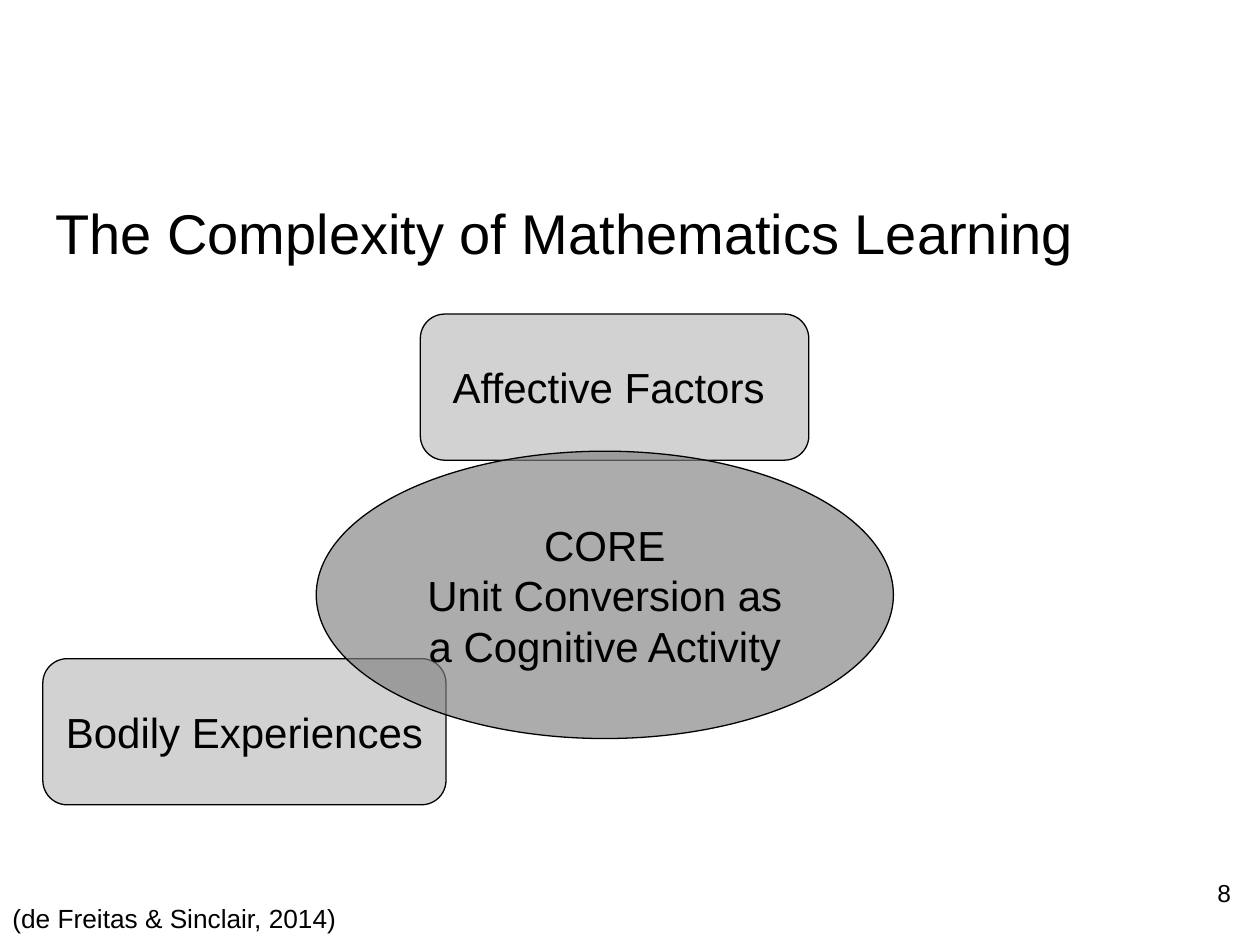
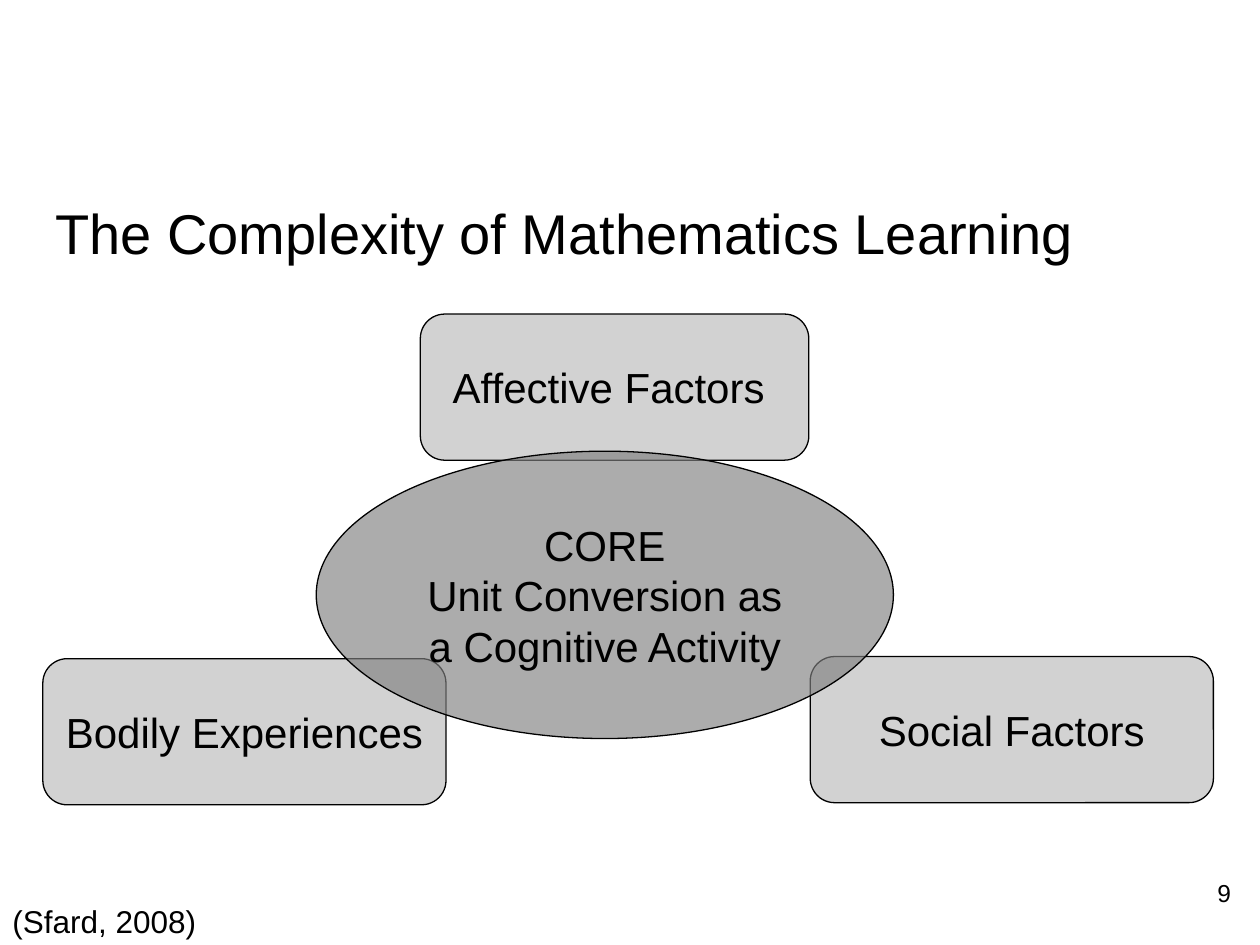
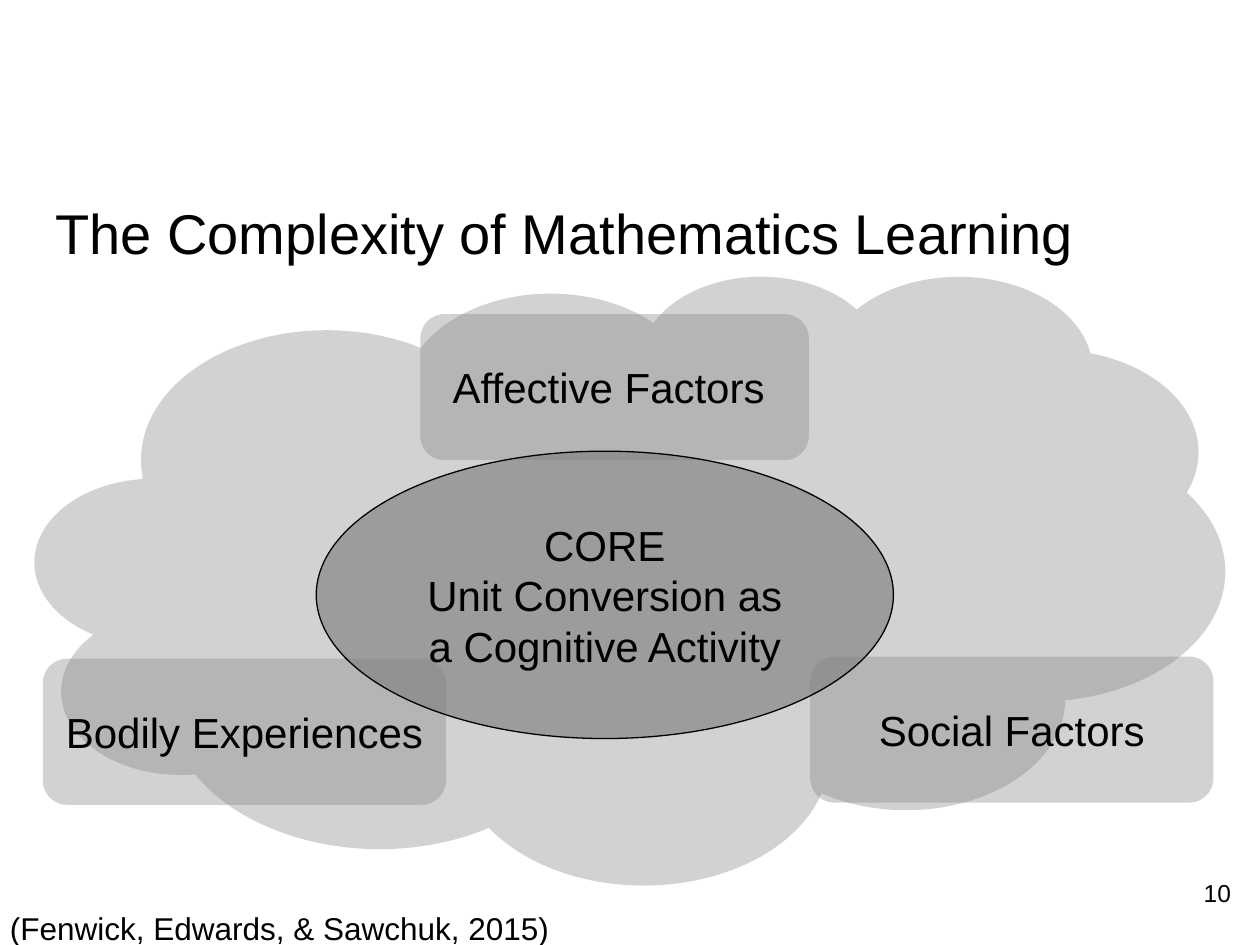
from dataclasses import dataclass

from lxml import etree
from pptx import Presentation
from pptx.dml.color import RGBColor
from pptx.enum.shapes import MSO_SHAPE
from pptx.enum.text import MSO_ANCHOR, MSO_AUTO_SIZE, PP_ALIGN
from pptx.oxml.ns import qn
from pptx.util import Pt

ROUNDED = MSO_SHAPE.ROUNDED_RECTANGLE
OVAL = MSO_SHAPE.OVAL
CLOUD = MSO_SHAPE.CLOUD
LEFT, CENTER, RIGHT = PP_ALIGN.LEFT, PP_ALIGN.CENTER, PP_ALIGN.RIGHT
TOP, MIDDLE = MSO_ANCHOR.TOP, MSO_ANCHOR.MIDDLE
NO_AUTOSIZE = MSO_AUTO_SIZE.NONE


@dataclass(frozen=True)
class Theme:
    font: str = "Arial"
    ink: RGBColor = RGBColor(0, 0, 0)
    paper: RGBColor = RGBColor(255, 255, 255)
    gray: RGBColor = RGBColor(128, 128, 128)
    factor_opacity: int = 35
    core_opacity: int = 65
    title_size: float = 32
    label_size: float = 24
    number_size: float = 14
    line_width: float = 0.75
    inset: float = 7.2
    title_inset_top: float = 11.2


THEME = Theme()
TITLE = "The Complexity of Mathematics Learning"
TITLE_BOX = (24.5, 102.2, 671, 45.4)
NUMBER_BOX = (667.4, 489.6, 43.2, 41)
CITATION_BOX = (0, 508.3, 768, 31)
LOW_CITATION_BOX = (-1.4, 509, 361.4, 31)
CORE_BOX = (180.7, 257.8, 329.8, 164.2)
CLOUD_BOX = (20.2, 157, 679.7, 347.8)
AFFECTIVE = ("Affective Factors ", (240.2, 179.5, 222, 83.5))
BODILY = ("Bodily Experiences", (24.5, 376.4, 230.4, 83.5))
SOCIAL = ("Social Factors", (463, 375.2, 230.4, 83.5))


def points(box):
    return [Pt(length) for length in box]


def write_text(shape, text, size, alignment=LEFT, anchor=TOP):
    frame = shape.text_frame
    frame.text = text
    frame.word_wrap = True
    frame.auto_size = NO_AUTOSIZE
    frame.vertical_anchor = anchor
    frame.margin_left = frame.margin_right = Pt(THEME.inset)
    frame.margin_top = frame.margin_bottom = Pt(THEME.inset)
    for paragraph in frame.paragraphs:
        paragraph.alignment = alignment
        for run in paragraph.runs:
            run.font.name = THEME.font
            run.font.size = Pt(size)
            run.font.color.rgb = THEME.ink


def add_title(slide):
    title = slide.shapes.title
    title.left, title.top, title.width, title.height = points(TITLE_BOX)
    write_text(title, TITLE, THEME.title_size)
    title.text_frame.margin_top = Pt(THEME.title_inset_top)


def add_gray_shape(slide, kind, box, opacity, outlined):
    shape = slide.shapes.add_shape(kind, *points(box))
    shape.shadow.inherit = False
    shape.fill.solid()
    shape.fill.fore_color.rgb = THEME.gray
    color = shape.fill._xPr.find(qn("a:solidFill"))[0]
    etree.SubElement(color, qn("a:alpha"), val=str(opacity * 1000))
    if outlined:
        shape.line.color.rgb = THEME.ink
        shape.line.width = Pt(THEME.line_width)
    else:
        shape.line.fill.background()
    return shape


def add_factor(slide, label, box, outlined):
    factor = add_gray_shape(slide, ROUNDED, box, THEME.factor_opacity, outlined)
    write_text(factor, label, THEME.label_size, CENTER, MIDDLE)


def add_core(slide):
    core = add_gray_shape(slide, OVAL, CORE_BOX, THEME.core_opacity, True)
    text = "CORE\nUnit Conversion as a Cognitive Activity"
    write_text(core, text, THEME.label_size, CENTER, MIDDLE)


def add_text(slide, box, text, size, alignment=LEFT, anchor=TOP):
    text_box = slide.shapes.add_textbox(*points(box))
    write_text(text_box, text, size, alignment, anchor)
    return text_box.text_frame.paragraphs[0]


def add_citation(slide, text, size, box=CITATION_BOX, line_spacing=1.0):
    paragraph = add_text(slide, box, text, size)
    paragraph.space_after = Pt(16)
    paragraph.line_spacing = line_spacing


def add_complexity_slide(presentation, number, factors, clouded=False):
    slide = presentation.slides.add_slide(presentation.slide_layouts[5])
    slide.background.fill.solid()
    slide.background.fill.fore_color.rgb = THEME.paper
    add_title(slide)
    if clouded:
        add_gray_shape(slide, CLOUD, CLOUD_BOX, THEME.factor_opacity, False)
    for label, box in factors:
        add_factor(slide, label, box, not clouded)
    add_core(slide)
    add_text(slide, NUMBER_BOX, str(number), THEME.number_size, RIGHT, MIDDLE)
    return slide


def main():
    presentation = Presentation()
    presentation.slide_width, presentation.slide_height = Pt(720), Pt(540)

    bodily_slide = add_complexity_slide(presentation, 8, [AFFECTIVE, BODILY])
    add_citation(bodily_slide, "(de Freitas & Sinclair, 2014)", 15)

    all_factors = [AFFECTIVE, BODILY, SOCIAL]
    social_slide = add_complexity_slide(presentation, 9, all_factors)
    add_citation(social_slide, "(Sfard, 2008)", 18)

    cloud_slide = add_complexity_slide(presentation, 10, all_factors, clouded=True)
    add_citation(cloud_slide, "(Fenwick, Edwards, & Sawchuk, 2015)", 18, LOW_CITATION_BOX, 1.15)

    presentation.save("out.pptx")


if __name__ == "__main__":
    main()
